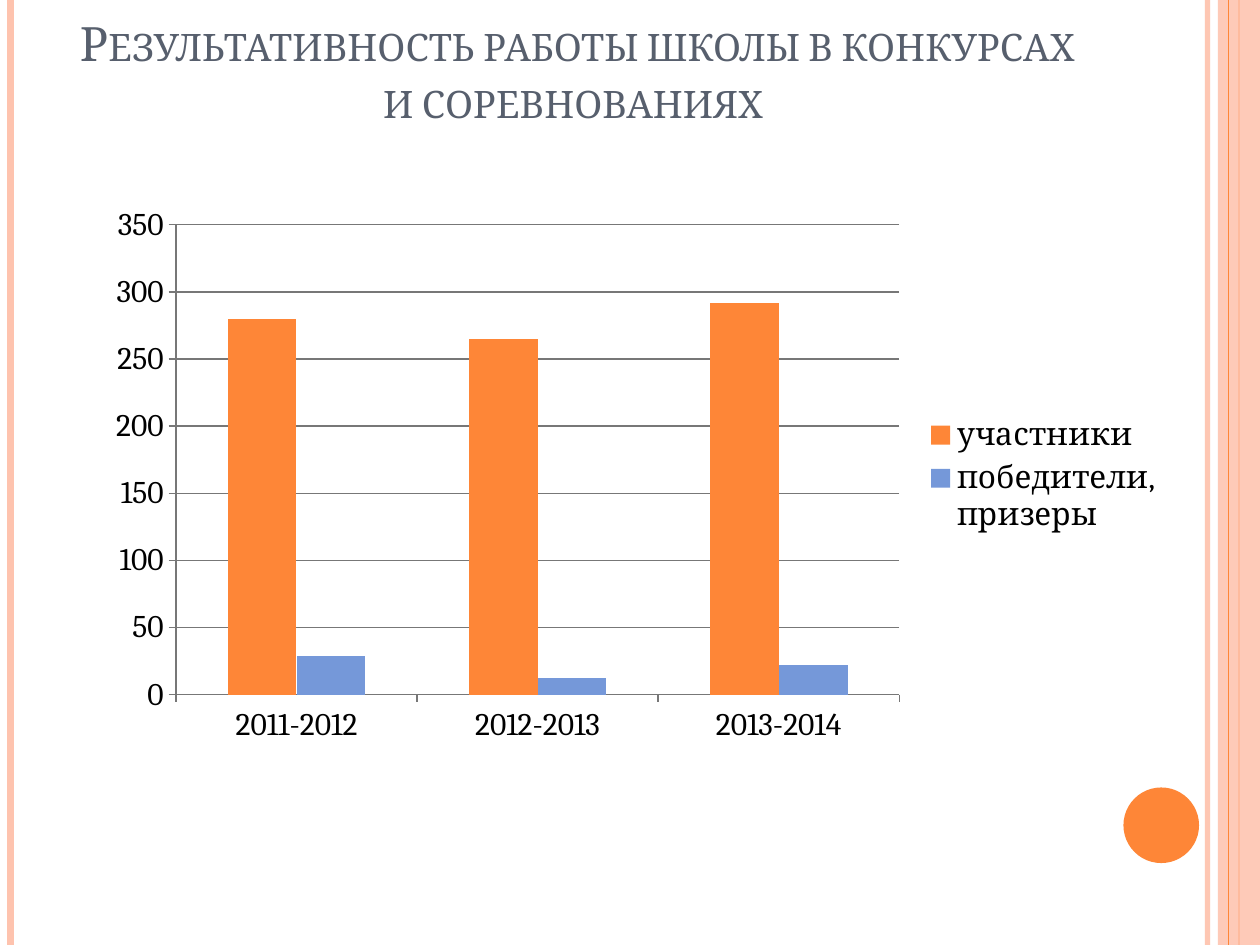
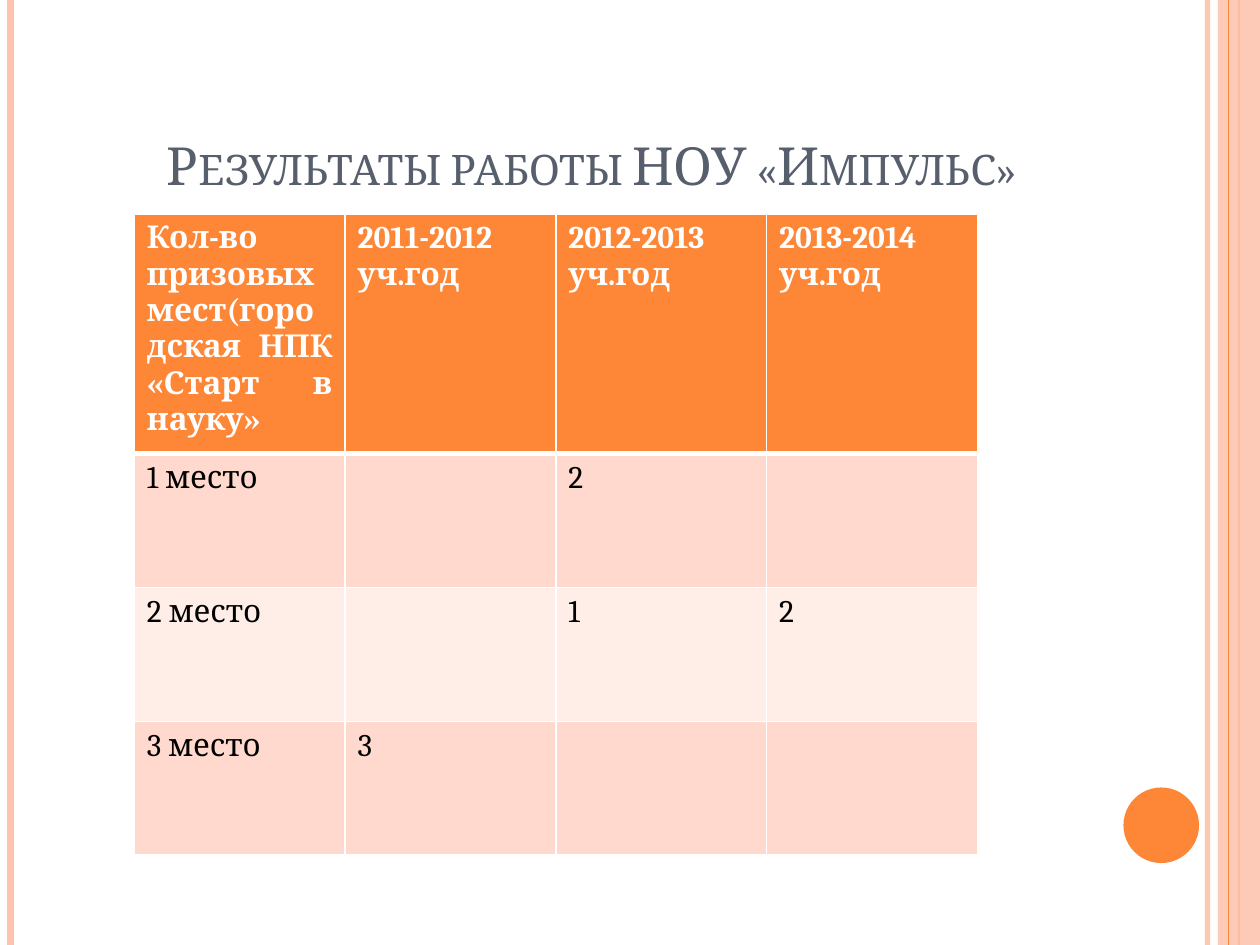
from lxml.etree import SubElement
from pptx import Presentation
from pptx.chart.data import CategoryChartData
from pptx.dml.color import RGBColor
from pptx.enum.chart import XL_CHART_TYPE, XL_LEGEND_POSITION, XL_TICK_MARK
from pptx.enum.shapes import MSO_CONNECTOR, MSO_SHAPE
from pptx.enum.text import MSO_ANCHOR, PP_ALIGN
from pptx.oxml.ns import qn
from pptx.util import Inches, Pt

COLORS = {
    "accent": "FE8637",
    "peach": "FEC3AE",
    "blue": "7598D9",
    "title": "575F6D",
    "grid": "777777",
    "band_dark": "FFD9CE",
    "band_light": "FFEDE8",
    "white": "FFFFFF",
    "black": "000000",
}
FONT = "Cambria"
BODY_SIZE = 18
COLS, ROWS = 120, 90
SLIDE_W, SLIDE_H = Inches(10), Inches(7.5)

YEARS = ["2011-2012", "2012-2013", "2013-2014"]
SERIES = [
    ("участники", [280, 265, 292], "accent"),
    ("победители, призеры ", [29, 12, 22], "blue"),
]
PRIZES = [
    [["Кол-во призовых мест(городская НПК «Старт в науку»"],
     ["2011-2012", "уч.год"], ["2012-2013 уч.год"], ["2013-2014 уч.год"]],
    [["1 место"], [], ["2"], []],
    [["2 место"], [], ["1"], ["2"]],
    [["3 место"], ["3"], [], []],
]


def rgb(name):
    return RGBColor.from_string(COLORS[name])


def col(n):
    return round(SLIDE_W * n / COLS)


def row(n):
    return round(SLIDE_H * n / ROWS)


def box(left, top, width, height):
    return col(left), row(top), col(width), row(height)


def set_alpha(element, percent):
    clr = element.find(".//" + qn("a:srgbClr"))
    SubElement(clr, qn("a:alpha")).set("val", str(percent * 1000))


def style_font(font, size, color, bold=False):
    font.name = FONT
    font.size = Pt(size)
    font.bold = bold
    font.color.rgb = rgb(color)


def add_stripe(slide, at, color, width, alpha=None):
    line = slide.shapes.add_connector(
        MSO_CONNECTOR.STRAIGHT, col(at), 0, col(at), SLIDE_H)
    line.line.color.rgb = rgb(color)
    line.line.width = Pt(width)
    SubElement(line._element.spPr, qn("a:effectLst"))
    if alpha:
        set_alpha(line._element.spPr, alpha)


def add_filled(slide, kind, place, color, alpha=None):
    sp = slide.shapes.add_shape(kind, *box(*place))
    sp.shadow.inherit = False
    sp.fill.solid()
    sp.fill.fore_color.rgb = rgb(color)
    sp.line.fill.background()
    if alpha:
        set_alpha(sp._element.spPr, alpha)


def add_frame(slide):
    add_stripe(slide, 115, "peach", 3, 93)
    add_stripe(slide, 1, "peach", 4.5)
    add_stripe(slide, 118, "accent", 1.5)
    add_filled(slide, MSO_SHAPE.RECTANGLE, (116, 0, 4, ROWS), "peach", 87)
    add_stripe(slide, 117, "accent", 0.75)
    add_filled(slide, MSO_SHAPE.OVAL, (107, 75, 7.2, 7.2), "accent")


def add_title(slide, text, place, size, align):
    tf = slide.shapes.add_textbox(*box(*place)).text_frame
    tf.word_wrap = True
    tf.vertical_anchor = MSO_ANCHOR.BOTTOM
    p = tf.paragraphs[0]
    p.alignment = align
    r = p.add_run()
    r.text = text
    style_font(r.font, size, "title")
    r._r.get_or_add_rPr().set("cap", "small")


def style_line(line):
    line.color.rgb = rgb("grid")
    line.width = Pt(0.75)


def add_results_chart(slide, place):
    data = CategoryChartData()
    data.categories = YEARS
    for name, values, _ in SERIES:
        data.add_series(name, values)
    chart = slide.shapes.add_chart(
        XL_CHART_TYPE.COLUMN_CLUSTERED, *box(*place), data).chart
    chart.has_title = False
    style_font(chart.font, BODY_SIZE, "black")
    chart.has_legend = True
    chart.legend.position = XL_LEGEND_POSITION.RIGHT
    chart.legend.include_in_layout = False
    for axis in (chart.category_axis, chart.value_axis):
        axis.major_tick_mark = XL_TICK_MARK.OUTSIDE
        axis.minor_tick_mark = XL_TICK_MARK.NONE
        style_line(axis.format.line)
    chart.value_axis.has_major_gridlines = True
    style_line(chart.value_axis.major_gridlines.format.line)
    plot = chart.plots[0]
    plot.gap_width = 150
    plot.overlap = 0
    plot.vary_by_categories = False
    for series, (_, _, color) in zip(plot.series, SERIES):
        series.invert_if_negative = False
        series.format.fill.solid()
        series.format.fill.fore_color.rgb = rgb(color)


def set_borders(cell, widths):
    tcPr = cell._tc.get_or_add_tcPr()
    for side, width in zip("LRTB", widths):
        ln = SubElement(tcPr, qn("a:ln" + side), w=str(Pt(width)))
        fill = SubElement(ln, qn("a:solidFill"))
        SubElement(fill, qn("a:srgbClr"), val=COLORS["white"])


def fill_cell(cell, lines, i, j):
    header = i == 0
    set_borders(cell, (1, 1, 3 if i == 1 else 1, 3 if header else 1))
    cell.fill.solid()
    band = "band_dark" if i % 2 else "band_light"
    cell.fill.fore_color.rgb = rgb("accent" if header else band)
    tf = cell.text_frame
    for n, text in enumerate(lines):
        p = tf.add_paragraph() if n else tf.paragraphs[0]
        p.alignment = PP_ALIGN.JUSTIFY if header and j == 0 else PP_ALIGN.LEFT
        r = p.add_run()
        r.text = text
        style_font(r.font, BODY_SIZE, "white" if header else "black", header)


def add_prize_table(slide, left, top, col_width, head_height, row_height):
    n_rows, n_cols = len(PRIZES), len(PRIZES[0])
    height = head_height + (n_rows - 1) * row_height
    table = slide.shapes.add_table(
        n_rows, n_cols, *box(left, top, n_cols * col_width, height)).table
    for column in table.columns:
        column.width = col(col_width)
    for i, line in enumerate(table.rows):
        line.height = row(row_height if i else head_height)
        for j, cell in enumerate(line.cells):
            fill_cell(cell, PRIZES[i][j], i, j)


def new_slide(prs):
    slide = prs.slides.add_slide(prs.slide_layouts[6])
    add_frame(slide)
    return slide


def main():
    prs = Presentation()
    prs.slide_width, prs.slide_height = SLIDE_W, SLIDE_H

    contests = new_slide(prs)
    add_title(contests,
              "Результативность работы школы в конкурсах и соревнованиях ",
              (6, 3.6, 98, 9.2), 27, PP_ALIGN.CENTER)
    add_results_chart(contests, (9, 18.6, 103, 53.3))

    society = new_slide(prs)
    add_title(society, "Результаты работы НОУ «Импульс»",
              (14.7, 4.3, 98, 15), 30, PP_ALIGN.LEFT)
    add_prize_table(society, 12.8, 20.4, 20.07, 21.8, 12.75)

    prs.save("out.pptx")


if __name__ == "__main__":
    main()
